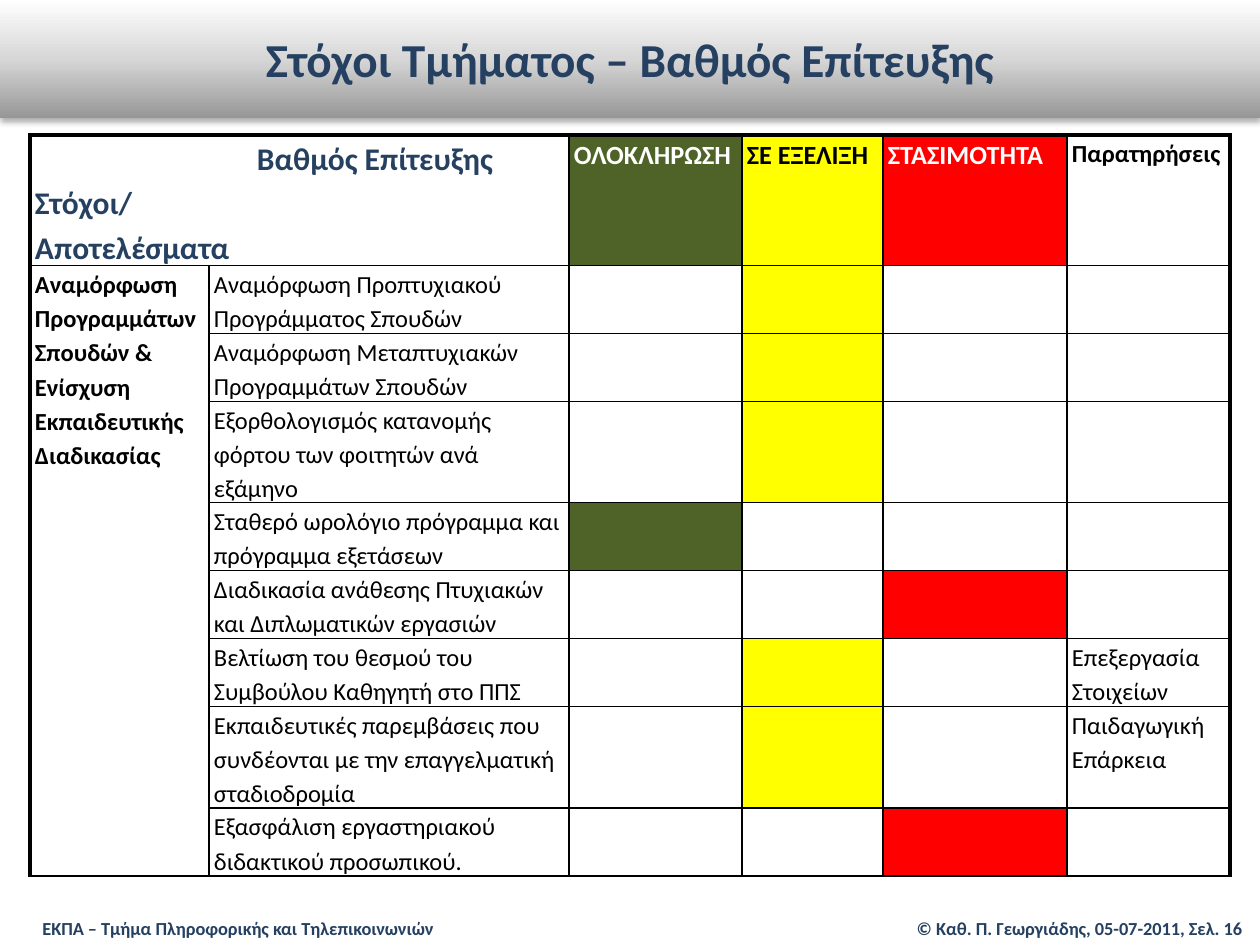
from lxml.etree import SubElement
from pptx import Presentation
from pptx.dml.color import RGBColor
from pptx.enum.shapes import MSO_SHAPE
from pptx.enum.text import MSO_ANCHOR, PP_ALIGN
from pptx.oxml import parse_xml
from pptx.oxml.ns import nsdecls, qn
from pptx.util import Pt

SCALE = 914400 / 126
COLORS = {
    "navy": "254061", "black": "000000", "white": "FFFFFF",
    "green": "4F6228", "yellow": "FFFF00", "red": "FF0000",
    "silver": "D7D7D7", "gray": "979797",
}
COLUMNS = [179, 360, 173, 141, 184, 163]
HEADER_HEIGHT = 130
ROW_HEIGHTS = {2: 68, 3: 101}
THIN, THICK = 1, 2.25
HEADINGS = [
    ("ΟΛΟΚΛΗΡΩΣΗ", 15, "white", "green"),
    ("ΣΕ ΕΞΕΛΙΞΗ", 15, "black", "yellow"),
    ("ΣΤΑΣΙΜΟΤΗΤΑ", 15, "white", "red"),
    ("Παρατηρήσεις", 14, "black", None),
]
STATUS_COLUMNS = {"green": 2, "yellow": 3, "red": 4}
GOAL_GROUP = "Αναμόρφωση Προγραμμάτων Σπουδών & Ενίσχυση Εκπαιδευτικής Διαδικασίας"
GOALS = [
    ("Αναμόρφωση Προπτυχιακού Προγράμματος Σπουδών", 2, "yellow", ""),
    ("Αναμόρφωση Μεταπτυχιακών Προγραμμάτων Σπουδών", 2, "yellow", ""),
    ("Εξορθολογισμός κατανομής φόρτου των φοιτητών ανά εξάμηνο", 3, "yellow", ""),
    ("Σταθερό ωρολόγιο πρόγραμμα και πρόγραμμα εξετάσεων", 2, "green", ""),
    ("Διαδικασία ανάθεσης Πτυχιακών και Διπλωματικών εργασιών", 2, "red", ""),
    ("Βελτίωση του θεσμού του Συμβούλου Καθηγητή στο ΠΠΣ", 2, "yellow",
     "Επεξεργασία Στοιχείων"),
    ("Εκπαιδευτικές παρεμβάσεις που συνδέονται με την επαγγελματική σταδιοδρομία", 3,
     "yellow", "Παιδαγωγική Επάρκεια"),
    ("Εξασφάλιση εργαστηριακού διδακτικού προσωπικού.", 2, "red", ""),
]


def px(length):
    return round(length * SCALE)


def apply(target, values):
    for name, value in values.items():
        setattr(target, name, value)


def write(frame, lines, size, color, bold=True, **paragraph_format):
    for index, line in enumerate(lines):
        paragraph = frame.add_paragraph() if index else frame.paragraphs[0]
        apply(paragraph, paragraph_format)
        span = paragraph.add_run()
        span.text = line
        apply(span.font, {"name": "Calibri", "size": Pt(size), "bold": bold})
        span.font.color.rgb = RGBColor.from_string(COLORS[color])


def add_footer(page, left, width, text, alignment):
    box = page.shapes.add_textbox(px(left), px(911), px(width), px(35))
    box.text_frame.word_wrap = True
    write(box.text_frame, [text], 10.5, "navy", alignment=alignment)


def add_title(page, text):
    band = page.shapes.add_shape(MSO_SHAPE.RECTANGLE, 0, px(-1), px(1260), px(119))
    band.line.fill.background()
    properties = band._element.spPr
    stops = "".join(
        f'<a:gs pos="{position}"><a:srgbClr val="{COLORS[color]}"/></a:gs>'
        for position, color in [(0, "gray"), (50000, "silver"), (100000, "white")])
    properties.find(qn("a:prstGeom")).addnext(parse_xml(
        f'<a:gradFill {nsdecls("a")} rotWithShape="1"><a:gsLst>{stops}</a:gsLst>'
        '<a:lin ang="16200000" scaled="0"/></a:gradFill>'))
    properties.append(parse_xml(
        f'<a:effectLst {nsdecls("a")}><a:outerShdw blurRad="{Pt(3.5)}" dist="{Pt(2.2)}"'
        f' dir="5400000" rotWithShape="0"><a:srgbClr val="{COLORS["black"]}">'
        '<a:alpha val="32000"/></a:srgbClr></a:outerShdw></a:effectLst>'))
    band.text_frame.vertical_anchor = MSO_ANCHOR.MIDDLE
    write(band.text_frame, [text], 27, "navy", alignment=PP_ALIGN.CENTER)


def set_borders(cell, widths):
    properties = cell._tc.get_or_add_tcPr()
    for side, width in widths.items():
        line = SubElement(properties, qn(f"a:ln{side}"), w=str(Pt(width)))
        fill = SubElement(line, qn("a:solidFill"))
        SubElement(fill, qn("a:srgbClr"), val=COLORS["black"])


def fill_cell(cell, color):
    cell.fill.solid()
    cell.fill.fore_color.rgb = RGBColor.from_string(COLORS[color])


def write_cell(cell, lines, size=14, color="black", bold=True):
    write(cell.text_frame, lines, size, color, bold, line_spacing=1.15)


def add_grid(page):
    heights = [HEADER_HEIGHT] + [ROW_HEIGHTS[goal[1]] for goal in GOALS]
    frame = page.shapes.add_table(len(heights), len(COLUMNS), px(30), px(135),
                                  px(sum(COLUMNS)), px(sum(heights)))
    table = frame.table
    apply(table, {"first_row": False, "horz_banding": False})
    for column, width in zip(table.columns, COLUMNS):
        column.width = px(width)
    last = len(COLUMNS) - 1
    for row_index, height in enumerate(heights):
        table.rows[row_index].height = px(height)
        for column_index in range(len(COLUMNS)):
            cell = table.cell(row_index, column_index)
            apply(cell, {"margin_left": px(5), "margin_right": px(5),
                         "margin_top": 0, "margin_bottom": 0})
            set_borders(cell, {
                "L": THIN if column_index else THICK,
                "R": THICK if column_index == last else THIN,
                "T": THIN if row_index else THICK,
                "B": THIN,
            })
            cell.fill.background()
    table.cell(0, 0).merge(table.cell(0, 1))
    table.cell(1, 0).merge(table.cell(len(GOALS), 0))
    return table


def add_goals_table(page):
    table = add_grid(page)
    corner = table.cell(0, 0)
    write_cell(corner, ["Βαθμός Επίτευξης", "Στόχοι/", "Αποτελέσματα"], 18, "navy")
    corner.text_frame.paragraphs[0]._p.get_or_add_pPr().set("marL", str(px(222)))
    for column, (heading, size, color, fill) in enumerate(HEADINGS, start=2):
        cell = table.cell(0, column)
        write_cell(cell, [heading], size, color)
        if fill:
            fill_cell(cell, fill)
    write_cell(table.cell(1, 0), [GOAL_GROUP])
    for row, (goal, _, status, remark) in enumerate(GOALS, start=1):
        write_cell(table.cell(row, 1), [goal], bold=False)
        fill_cell(table.cell(row, STATUS_COLUMNS[status]), status)
        if remark:
            write_cell(table.cell(row, 5), [remark], bold=False)


def main():
    deck = Presentation()
    apply(deck, {"slide_width": px(1260), "slide_height": px(945)})
    page = deck.slides.add_slide(deck.slide_layouts[6])
    add_footer(page, 30, 461, "ΕΚΠΑ – Τμήμα Πληροφορικής και Τηλεπικοινωνιών", PP_ALIGN.LEFT)
    add_footer(page, 897, 358, "© Καθ. Π. Γεωργιάδης, 05-07-2011, Σελ. 16", PP_ALIGN.RIGHT)
    add_goals_table(page)
    add_title(page, "Στόχοι Τμήματος – Βαθμός Επίτευξης")
    deck.save("out.pptx")


if __name__ == "__main__":
    main()
